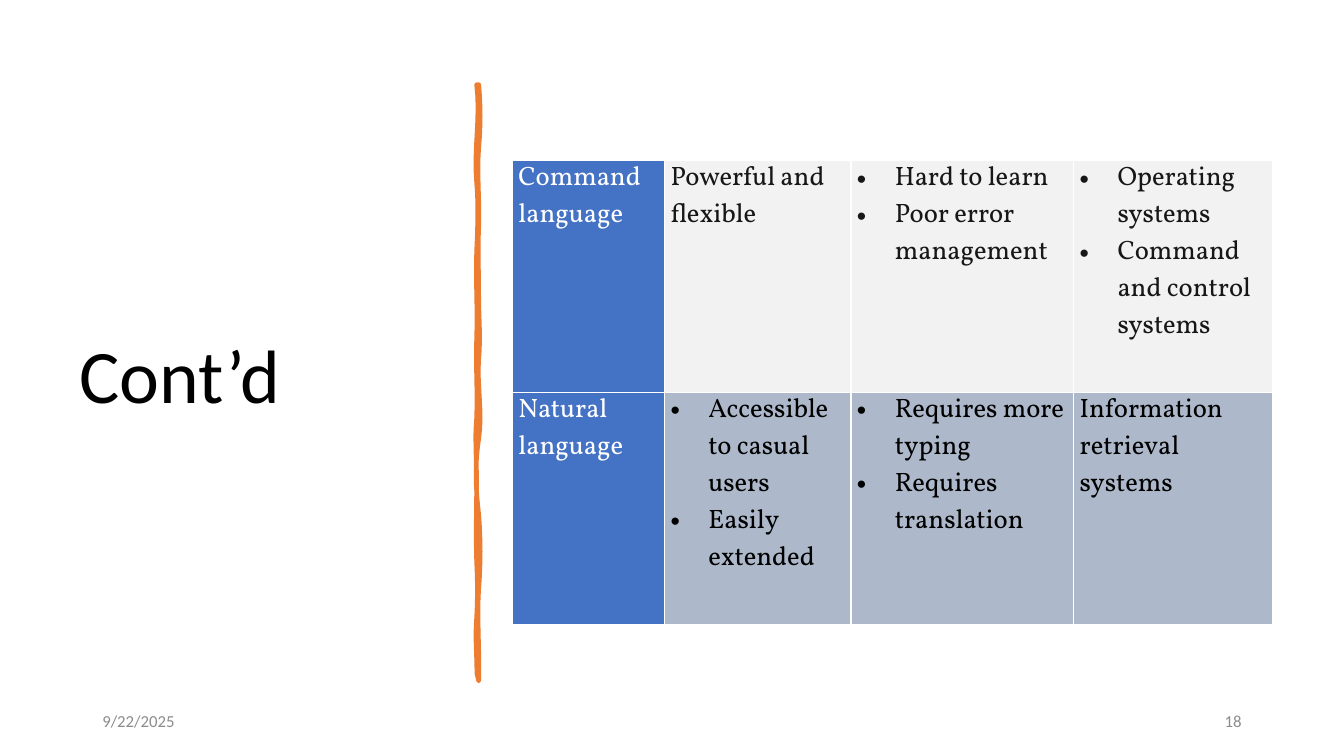
import pptx
import pptx.util
import pptx.dml.color
import pptx.enum.text
from lxml import etree

Pt = pptx.util.Pt
PP_ALIGN = pptx.enum.text.PP_ALIGN
MIDDLE = pptx.enum.text.MSO_ANCHOR.MIDDLE
NS = "http://schemas.openxmlformats.org/drawingml/2006/main"

COLORS = {
    "white": "FFFFFF", "black": "000000", "ink": "181717", "grey": "8C8C8C",
    "blue": "4472C4", "light": "F2F2F2", "steel": "ADB9CA", "orange": "ED7D31",
}

# Each cell: a string is plain text, a list is bulleted.
ROWS = [
    (["light", "ink"], ["Command language", "Powerful and flexible",
                        ["Hard to learn", "Poor error management"],
                        ["Operating systems", "Command and control systems"]]),
    (["steel", "black"], ["Natural language",
                          ["Accessible to casual users", "Easily extended"],
                          ["Requires more typing", "Requires translation"],
                          "Information retrieval systems"]),
]
COL_WIDTHS = [108.7, 133.2, 159.1, 141.8]

# Wavy edges: two bulges and the end height of each wave.
RIGHT_WAVES = [(1.4, 1.4, 45), (-1.4, 0.7, 102), (-0.7, 0, 151), (0, 1.4, 196),
               (-1.4, 2.9, 253), (-2.9, -2.2, 307), (1.4, 1.4, 360), (-1.4, 0.7, 426)]
LEFT_WAVES = [(0.7, -1.4, 381), (0.7, 0.7, 341), (-0.7, 0, 283), (0, -1.4, 238),
              (0.7, -0.7, 181), (0.7, -0.7, 119), (0.7, 1.4, 70), (-2.2, 2.9, 0)]


def rgb(name):
    return pptx.dml.color.RGBColor.from_string(COLORS[name])


def set_attrs(obj, values):
    for name, value in values.items():
        setattr(obj, name, value)


def set_font(font, name, size, color):
    set_attrs(font, {"name": name, "size": Pt(size)})
    font.color.rgb = rgb(color)


def place(sp, box):
    set_attrs(sp, dict(zip(("left", "top", "width", "height"), map(Pt, box))))


def add_title(slide, box, text):
    sp = slide.shapes.title
    place(sp, box)
    tf = sp.text_frame
    set_attrs(tf, {"text": text, "word_wrap": True, "vertical_anchor": MIDDLE})
    p = tf.paragraphs[0]
    set_attrs(p, {"alignment": PP_ALIGN.LEFT, "line_spacing": 0.9})
    set_font(p.runs[0].font, "Calibri", 54, "black")


def add_footer(slide, box, text, alignment):
    tf = slide.shapes.add_textbox(*map(Pt, box)).text_frame
    set_attrs(tf, {"text": text, "word_wrap": True, "vertical_anchor": MIDDLE})
    p = tf.paragraphs[0]
    set_attrs(p, {"alignment": alignment, "space_after": Pt(6)})
    set_font(p.runs[0].font, "Calibri", 12, "grey")


def wave_points(x, y, waves, steps=8):
    """Sample the cubic waves along a vertical edge that starts at x, y."""
    points, start = [], y
    for bulge1, bulge2, end in waves:
        for i in range(1, steps + 1):
            t = i / steps
            dx = 3 * t * (1 - t) * ((1 - t) * bulge1 + t * bulge2)
            points.append((x + dx, start + t * (end - start)))
        start = end
    return points


def add_divider(slide, box):
    left, top, width, height = box
    points = wave_points(width, 0, RIGHT_WAVES) + wave_points(0, height, LEFT_WAVES)
    builder = slide.shapes.build_freeform(Pt(left + width), Pt(top), scale=1.0)
    builder.add_line_segments([(Pt(left + x), Pt(top + y)) for x, y in points])
    sp = builder.convert_to_shape()
    sp.shadow.inherit = False
    sp.fill.solid()
    sp.fill.fore_color.rgb = rgb("orange")
    sp.line.color.rgb = rgb("orange")
    sp.line.width = Pt(3.25)
    etree.SubElement(sp.line._get_or_add_ln(), f"{{{NS}}}round")


def add_borders(cell, color, width):
    tc_pr = cell._tc.get_or_add_tcPr()
    for side in "LRTB":
        ln = etree.SubElement(tc_pr, f"{{{NS}}}ln{side}", w=str(Pt(width)))
        fill = etree.SubElement(ln, f"{{{NS}}}solidFill")
        etree.SubElement(fill, f"{{{NS}}}srgbClr", val=COLORS[color])


def add_bullet(p, indent):
    p_pr = p._p.get_or_add_pPr()
    p_pr.set("marL", str(Pt(indent)))
    p_pr.set("indent", str(-Pt(indent)))
    etree.SubElement(p_pr, f"{{{NS}}}buFont", typeface="Arial")
    etree.SubElement(p_pr, f"{{{NS}}}buChar", char="•")


def fill_cell(cell, content, fill, color):
    add_borders(cell, "white", 1)
    cell.fill.solid()
    cell.fill.fore_color.rgb = rgb(fill)
    set_attrs(cell, {"margin_left": Pt(4.3), "margin_right": Pt(4.3),
                     "margin_top": 0, "margin_bottom": 0})
    bulleted = isinstance(content, list)
    cell.text = "\n".join(content) if bulleted else content
    for p in cell.text_frame.paragraphs:
        if bulleted:
            add_bullet(p, 27)
        set_font(p.runs[0].font, "Vollkorn", 19, color)


def add_style_table(slide, box):
    frame = slide.shapes.add_table(len(ROWS), len(COL_WIDTHS), *map(Pt, box))
    table = frame.table
    set_attrs(table, {"first_row": False, "horz_banding": False})
    for col, width in zip(table.columns, COL_WIDTHS):
        col.width = Pt(width)
    for r, (body, contents) in enumerate(ROWS):
        table.rows[r].height = Pt(box[3] / len(ROWS))
        for c, content in enumerate(contents):
            fill, color = body if c else ("blue", "white")
            fill_cell(table.cell(r, c), content, fill, color)


def main():
    prs = pptx.Presentation()
    set_attrs(prs, {"slide_width": Pt(960), "slide_height": Pt(540)})
    slide = prs.slides.add_slide(prs.slide_layouts[5])
    add_title(slide, (49.7, 50.4, 269.3, 440), "Cont’d")
    add_divider(slide, (340.5, 60.5, 1.5, 426))
    add_footer(slide, (66, 500.5, 216, 28.75), "9/22/2025", PP_ALIGN.LEFT)
    add_footer(slide, (678, 500.5, 216, 28.75), "18", PP_ALIGN.RIGHT)
    add_style_table(slide, (366, 114.7, sum(COL_WIDTHS), 331.2))
    prs.save("out.pptx")


if __name__ == "__main__":
    main()
